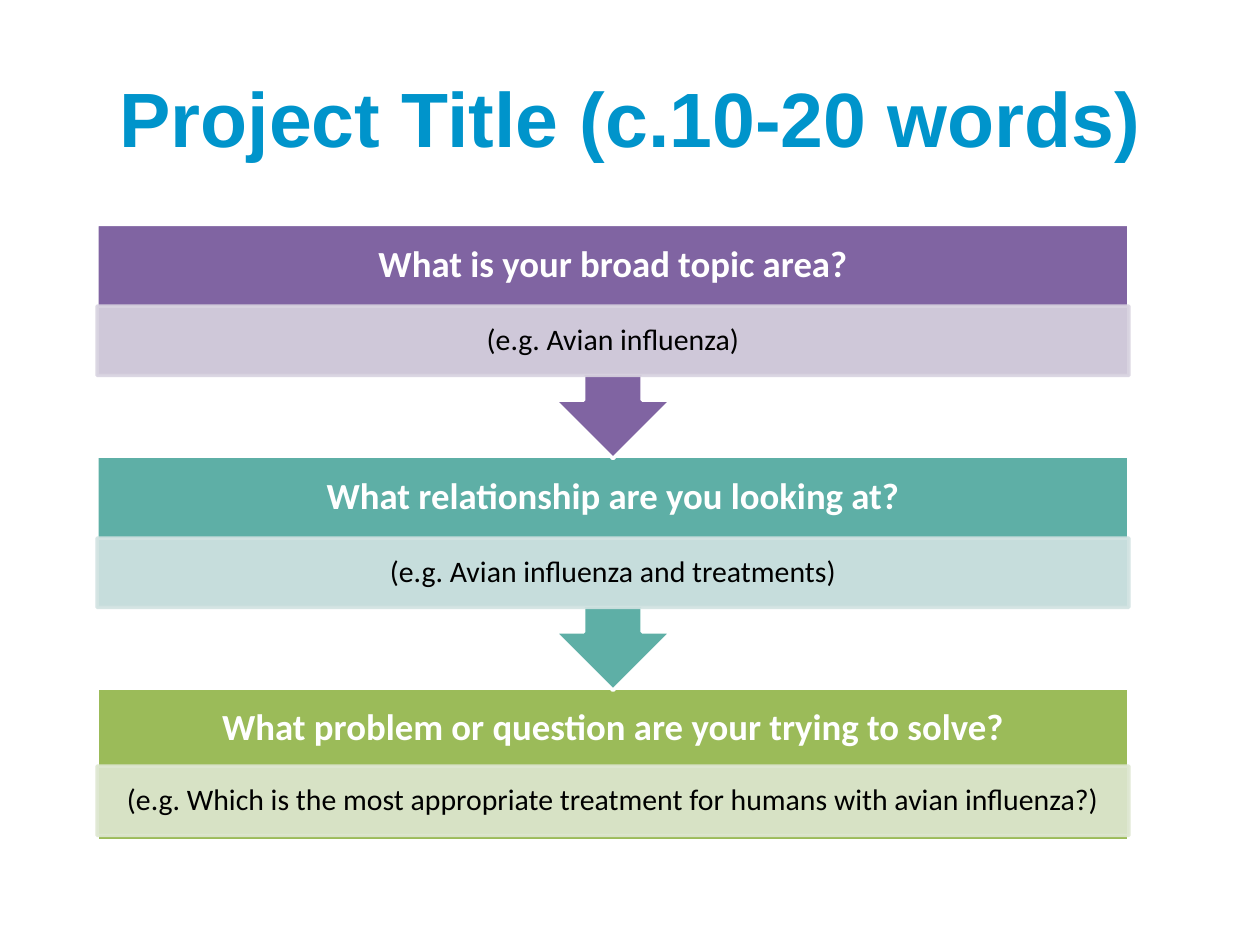
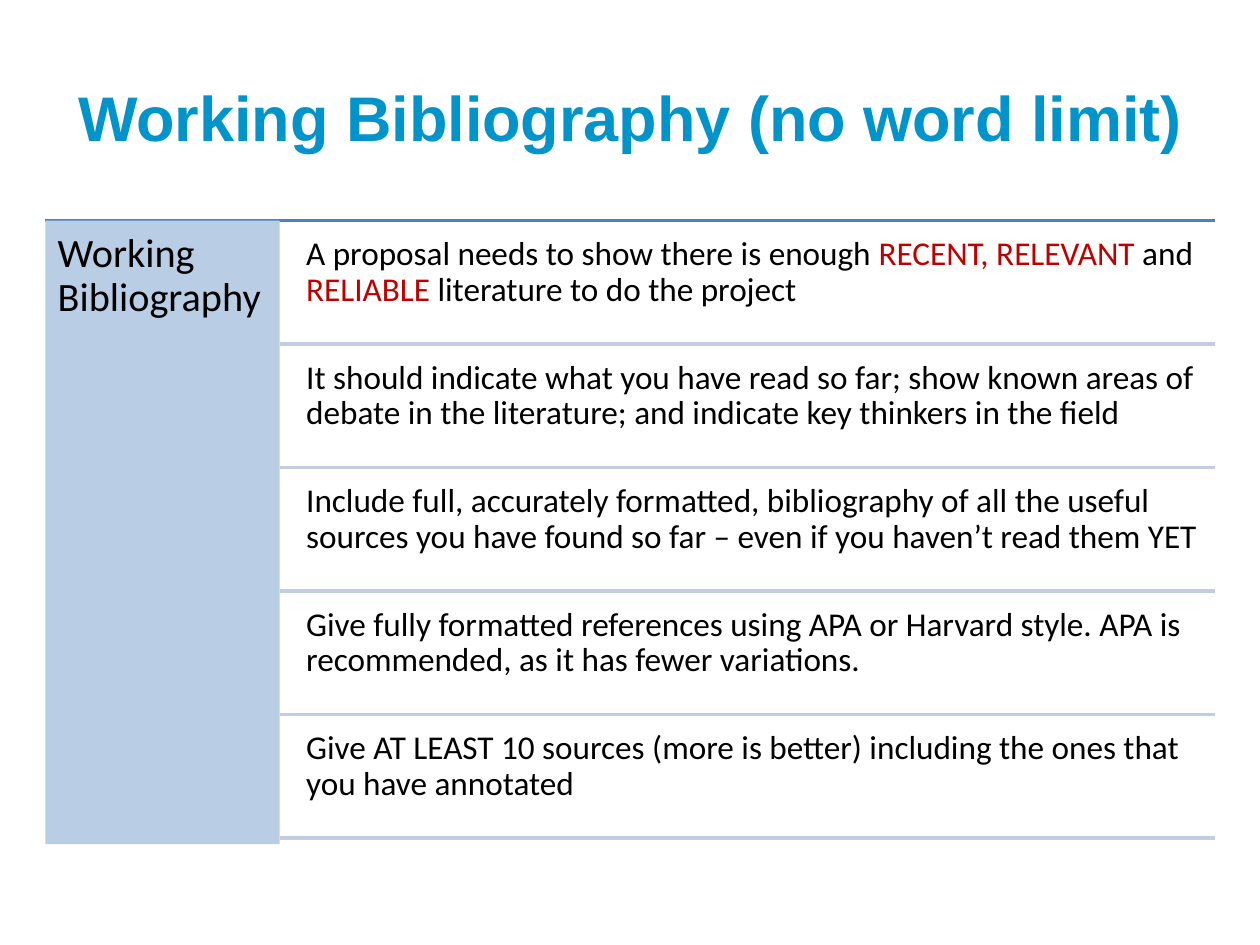
"""Build the project title and working bibliography slides."""
from dataclasses import dataclass
from typing import NamedTuple

from pptx import Presentation
from pptx.dml.color import RGBColor
from pptx.enum.shapes import MSO_CONNECTOR, MSO_SHAPE
from pptx.enum.text import MSO_ANCHOR, PP_ALIGN
from pptx.oxml.ns import qn
from pptx.shapes.autoshape import Shape
from pptx.slide import Slide
from pptx.text.text import TextFrame
from pptx.util import Emu, Pt

PX = 9144
TITLE_BLUE, RULE_BLUE, SIDE_BLUE, ROW_RULE = "0094CB", "4F81BD", "B9CDE5", "C2CDE1"
WHITE, BLACK, RED = "FFFFFF", "000000", "C00000"
LEFT, RIGHT = 36, 964


class Box(NamedTuple):
    """Left, top, width and height in px."""
    x: int
    y: int
    w: int
    h: int


class Run(NamedTuple):
    """Text with its colour."""
    text: str
    color: str = BLACK


@dataclass(frozen=True)
class TextStyle:
    """Font, alignment and insets of a text frame."""
    size: int
    name: str = "Calibri"
    bold: bool = False
    align: PP_ALIGN = PP_ALIGN.LEFT
    anchor: MSO_ANCHOR = MSO_ANCHOR.TOP
    inset_x: int = 10
    inset_y: int = 5
    spacing: float = 0.9


@dataclass(frozen=True)
class Step:
    """Question with its example and colours."""
    question: str
    example: str
    fill: str
    tint: str


CENTERED = {"align": PP_ALIGN.CENTER, "anchor": MSO_ANCHOR.MIDDLE}
QUESTION = TextStyle(21, bold=True, inset_x=16, inset_y=16, **CENTERED)
EXAMPLE = TextStyle(17, inset_x=13, inset_y=2, **CENTERED)
SIDE = TextStyle(23, inset_x=10, inset_y=10)
ROW = TextStyle(19, inset_x=8, inset_y=8)

STEPS = [
    Step("What is your broad topic area?", "(e.g. Avian influenza)", "8064A2", "D8D3E0"),
    Step("What relationship are you looking at?", "(e.g. Avian influenza and treatments)",
         "5EAFA6", "D2E3E2"),
    Step("What problem or question are your trying to solve?",
         "(e.g. Which is the most appropriate treatment for humans with avian influenza?)",
         "9BBB59", "DEE7D1"),
]

ADVICE = [
    [Run("A proposal needs to show there is enough "), Run("RECENT, RELEVANT", RED),
     Run(" and "), Run("RELIABLE ", RED), Run("literature to do the project")],
    [Run("It should indicate what you have read so far; show known areas of debate "
         "in the literature; and indicate key thinkers in the field")],
    [Run("Include full, accurately formatted, bibliography of all the useful sources "
         "you have found so far – even if you haven’t read them YET")],
    [Run("Give fully formatted references using APA or Harvard style. APA is "
         "recommended, as it has fewer variations.")],
    [Run("Give AT LEAST 10 sources (more is better) including the ones that you have annotated")],
]


def px(n: int) -> Emu:
    """Turn px into EMU."""
    return Emu(n * PX)


def rgb(color: str) -> RGBColor:
    """Turn a hex string into a colour."""
    return RGBColor.from_string(color)


def set_attrs(obj: object, values: dict) -> None:
    """Set each named attribute of an object."""
    for name, value in values.items():
        setattr(obj, name, value)


def write(tf: TextFrame, runs: list[Run], style: TextStyle) -> None:
    """Fill a text frame with one styled paragraph."""
    set_attrs(tf, {
        "word_wrap": True, "vertical_anchor": style.anchor,
        "margin_left": px(style.inset_x), "margin_right": px(style.inset_x),
        "margin_top": px(style.inset_y), "margin_bottom": px(style.inset_y),
    })
    p = tf.paragraphs[0]
    set_attrs(p, {"alignment": style.align, "line_spacing": style.spacing})
    for run in runs:
        r = p.add_run()
        r.text = run.text
        set_attrs(r.font, {"name": style.name, "size": Pt(style.size), "bold": style.bold})
        r.font.color.rgb = rgb(run.color)


def add_text(s: Slide, box: Box, runs: list[Run], style: TextStyle) -> None:
    """Add a text box."""
    write(s.shapes.add_textbox(*map(px, box)).text_frame, runs, style)


def add_block(s: Slide, kind: MSO_SHAPE, box: Box, fill: str, line: str | None = None,
              alpha: int = 100) -> Shape:
    """Add a filled shape, with an outline and an opacity if given."""
    sp = s.shapes.add_shape(kind, *map(px, box))
    sp.shadow.inherit = False
    sp.fill.solid()
    sp.fill.fore_color.rgb = rgb(fill)
    if line:
        sp.line.color.rgb = rgb(line)
        sp.line.width = Pt(2)
    else:
        sp.line.fill.background()
    if alpha < 100:
        for clr in sp._element.spPr.iter(qn("a:srgbClr")):
            clr.makeelement(qn("a:alpha"), {})
            tag = clr.makeelement(qn("a:alpha"), {"val": str(alpha * 1000)})
            clr.append(tag)
    return sp


def add_rule(s: Slide, x: int, y: int, color: str) -> None:
    """Add a horizontal line that ends at the right margin."""
    cx = s.shapes.add_connector(MSO_CONNECTOR.STRAIGHT, px(x), px(y), px(RIGHT), px(y))
    cx.line.color.rgb = rgb(color)
    cx.line.width = Pt(2)
    sp_pr = cx._element.spPr
    sp_pr.append(sp_pr.makeelement(qn("a:effectLst"), {}))


def add_slide(prs: Presentation, title: str, size: int) -> Slide:
    """Add a title-only slide with the shared title style."""
    s = prs.slides.add_slide(prs.slide_layouts[5])
    box = Box(LEFT, 30, 929, 125)
    set_attrs(s.shapes.title, dict(zip(("left", "top", "width", "height"), map(px, box))))
    style = TextStyle(size, name="Arial", bold=True, spacing=1.0, **CENTERED)
    write(s.shapes.title.text_frame, [Run(title, TITLE_BLUE)], style)
    return s


def add_steps(s: Slide) -> None:
    """Draw the chain of questions from the bottom up."""
    x, top, w, pitch = 77, 178, 819, 184
    last = len(STEPS) - 1
    for i, step in reversed(list(enumerate(STEPS))):
        y = top + i * pitch
        if i == last:
            add_block(s, MSO_SHAPE.RECTANGLE, Box(x, y, w, 121), step.fill, WHITE)
        else:
            sp = add_block(s, MSO_SHAPE.UP_ARROW_CALLOUT, Box(x, y, w, 186), step.fill, WHITE)
            sp.rotation = 180
        add_text(s, Box(x, y, w, 65), [Run(step.question, WHITE)], QUESTION)
        band = Box(x, y + (62 if i == last else 65), w, 55)
        sp = add_block(s, MSO_SHAPE.RECTANGLE, band, step.tint, step.tint, alpha=90)
        write(sp.text_frame, [Run(step.example)], EXAMPLE)


def add_advice(s: Slide) -> None:
    """Draw the side heading and the ruled rows of advice."""
    top, side_w, pitch = 175, 186, 98
    add_rule(s, LEFT, top, RULE_BLUE)
    sp = add_block(s, MSO_SHAPE.RECTANGLE, Box(LEFT, top, side_w, 495), SIDE_BLUE)
    write(sp.text_frame, [Run("Working Bibliography")], SIDE)
    for i, runs in enumerate(ADVICE):
        y = top + 5 + i * pitch
        add_text(s, Box(235, y, 729, 93), runs, ROW)
        add_rule(s, LEFT + side_w, y + 93, ROW_RULE)


def main() -> None:
    """Build and save the presentation."""
    prs = Presentation()
    set_attrs(prs, {"slide_width": px(1000), "slide_height": px(750)})
    add_steps(add_slide(prs, "Project Title (c.10-20 words)", 44))
    add_advice(add_slide(prs, "Working Bibliography (no word limit)", 36))
    prs.save("out.pptx")


if __name__ == "__main__":
    main()
